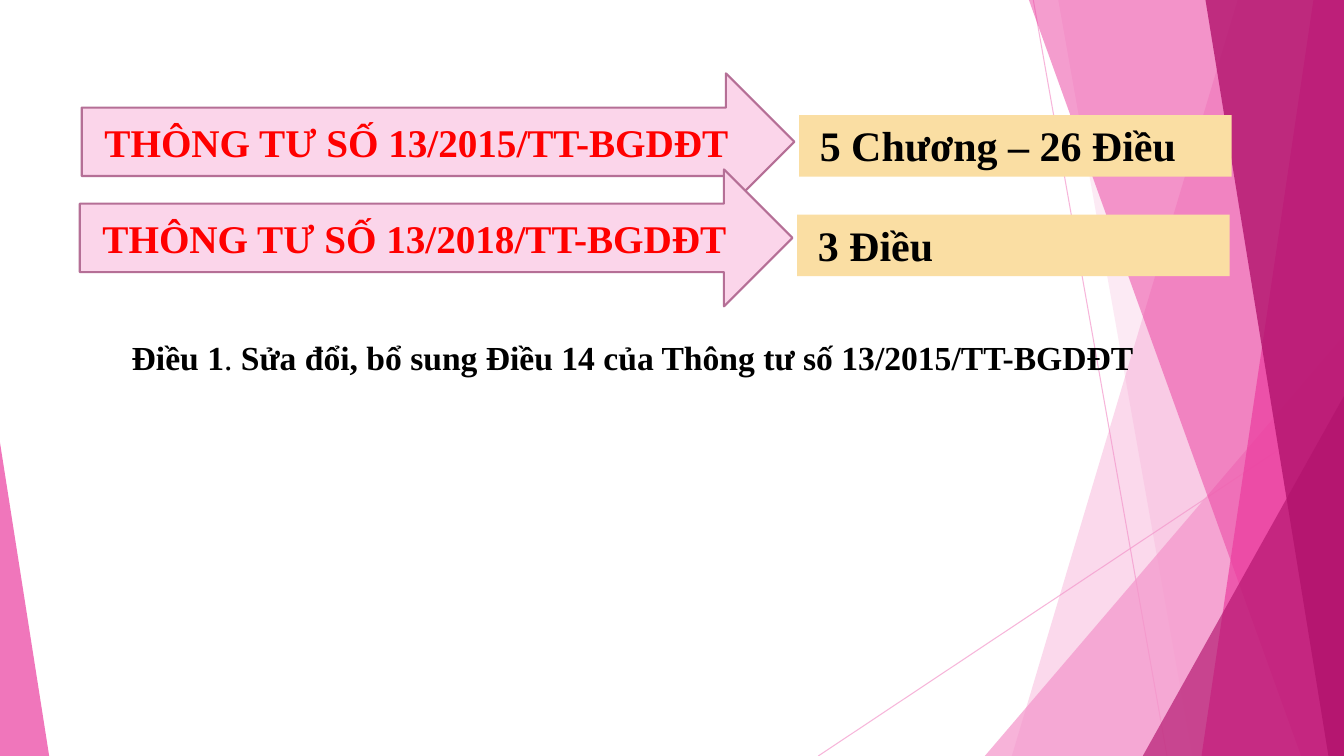
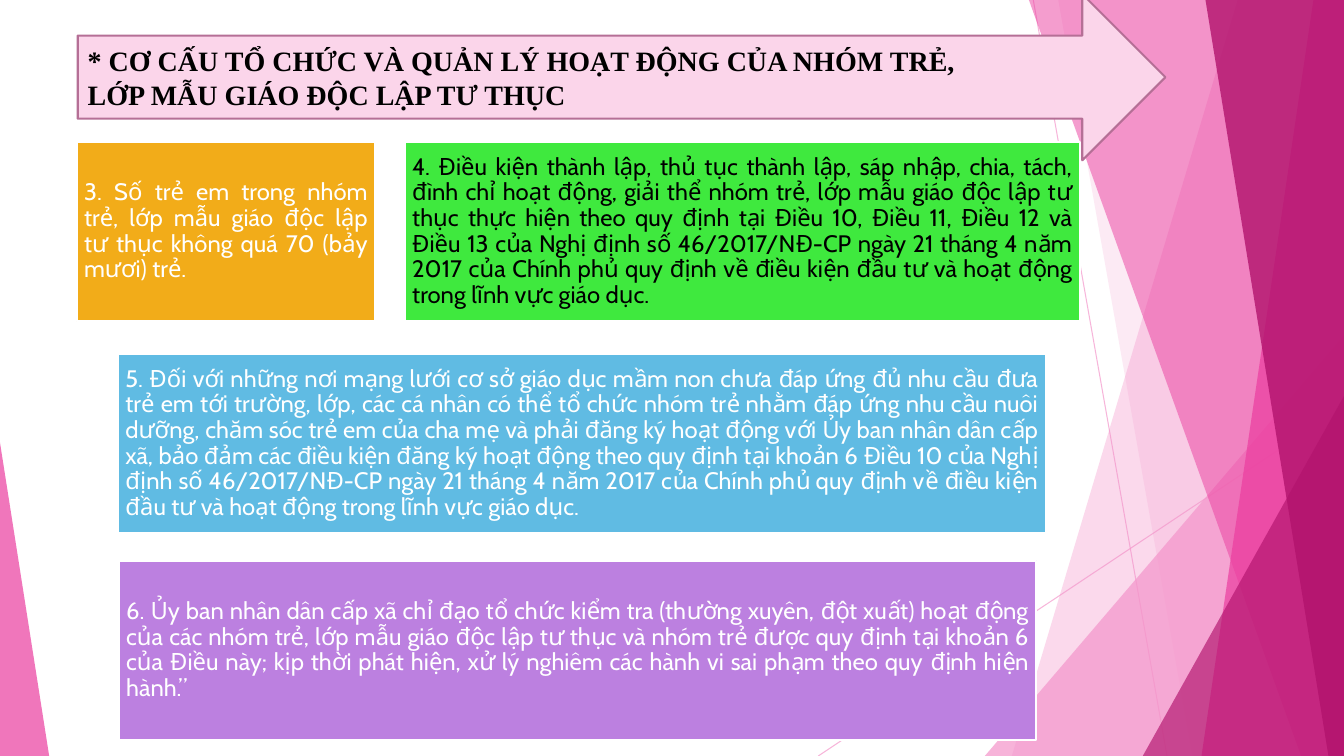
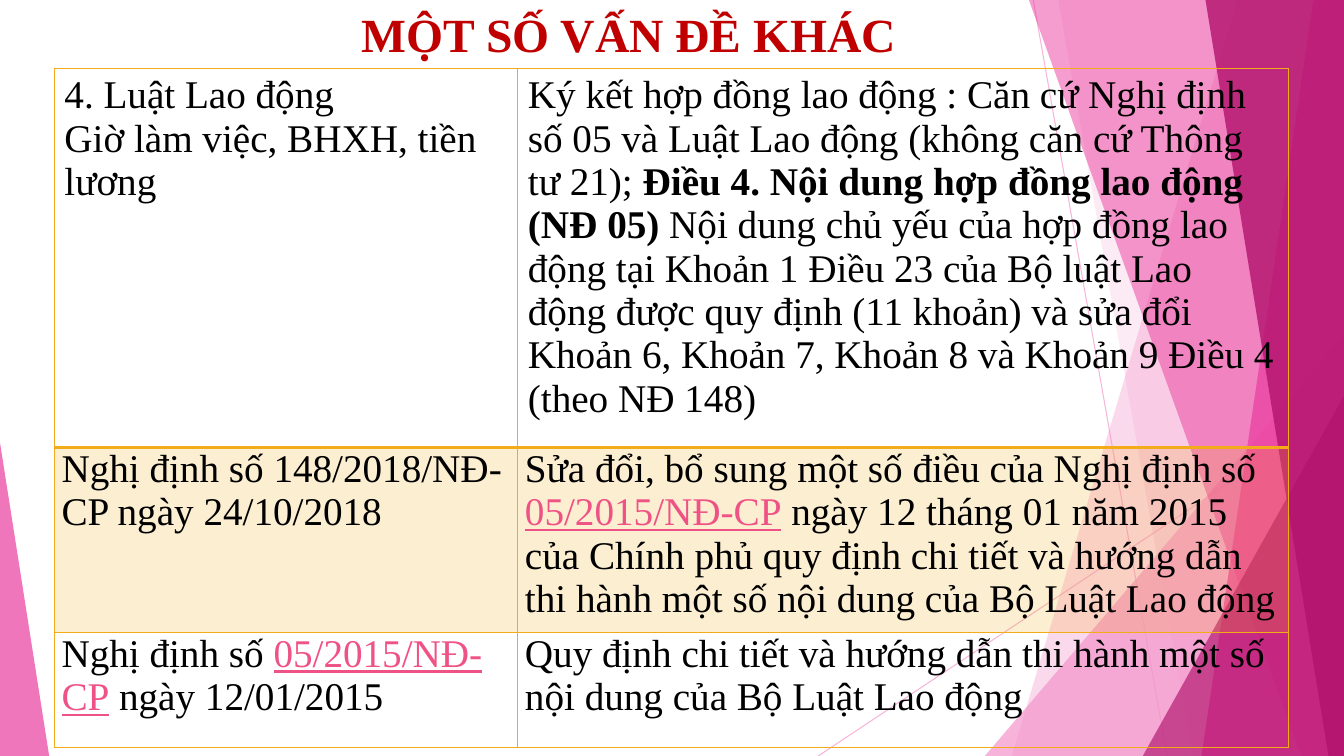
import functools

import lxml.etree
import pptx
import pptx.dml.color
import pptx.enum.shapes
import pptx.enum.text
import pptx.oxml.ns
import pptx.util

Cm = pptx.util.Cm
Pt = pptx.util.Pt
RGBColor = pptx.dml.color.RGBColor
SHAPE = pptx.enum.shapes.MSO_SHAPE
ALIGN = pptx.enum.text.PP_ALIGN
ANCHOR = pptx.enum.text.MSO_ANCHOR
qn = pptx.oxml.ns.qn

WHITE = RGBColor(0xFF, 0xFF, 0xFF)
BLACK = RGBColor(0x00, 0x00, 0x00)
RED = RGBColor(0xFF, 0x00, 0x00)
DARK_RED = RGBColor(0xC0, 0x00, 0x00)
PALE_PINK = RGBColor(0xFB, 0xD5, 0xEA)
MAUVE = RGBColor(0xB5, 0x6F, 0x96)
LIGHT_PINK = RGBColor(0xF4, 0x96, 0xCB)
PINK = RGBColor(0xEB, 0x3D, 0x9F)
MAGENTA = RGBColor(0xB2, 0x13, 0x6D)
SAND = RGBColor(0xFA, 0xDE, 0xA3)
AMBER = RGBColor(0xF2, 0xAC, 0x19)
GREEN = RGBColor(0x3F, 0xE9, 0x3E)
SKY = RGBColor(0x60, 0xBB, 0xE3)
VIOLET = RGBColor(0xBC, 0x80, 0xE0)
ROSE = RGBColor(0xEF, 0x52, 0x85)

WIDTH, HEIGHT = 33.87, 19.05
TITLE_ONLY, BLANK = 5, 6
SERIF = "Times New Roman"
CITATION = {"color.rgb": ROSE, "underline": True}


def apply(target, formats):
    for name, value in formats.items():
        *parents, last = name.split(".")
        setattr(functools.reduce(getattr, parents, target), last, value)


def font_format(size, color, bold=False, name=SERIF):
    return {"name": name, "size": Pt(size), "bold": bold, "color.rgb": color}


def write(frame, paragraphs, font, layout):
    for index, runs in enumerate(paragraphs):
        paragraph = frame.add_paragraph() if index else frame.paragraphs[0]
        apply(paragraph, {"alignment": ALIGN.LEFT, **layout})
        for text, changes in runs:
            run = paragraph.add_run()
            run.text = text
            apply(run.font, {**font, **changes})


def plain(*lines):
    return [[(line, {})] for line in lines]


def set_alpha(element, percent):
    for color in element.iter(qn("a:srgbClr")):
        alpha = lxml.etree.SubElement(color, qn("a:alpha"))
        alpha.set("val", str(percent * 1000))


def paint(shape, fill, line=None):
    shape.shadow.inherit = False
    shape.fill.solid()
    shape.fill.fore_color.rgb = fill
    if line is None:
        shape.line.fill.background()
    else:
        apply(shape.line, {"color.rgb": line, "width": Pt(1.5)})


def add_block(slide, kind, box, fill, line=None):
    block = slide.shapes.add_shape(kind, *map(Cm, box))
    paint(block, fill, line)
    return block


def add_ray(slide, ends):
    ray = slide.shapes.add_connector(
        pptx.enum.shapes.MSO_CONNECTOR.STRAIGHT, *map(Cm, ends))
    apply(ray.line, {"color.rgb": LIGHT_PINK, "width": Pt(0.75)})
    set_alpha(ray.element, 70)
    lxml.etree.SubElement(ray.element.spPr, qn("a:effectLst"))
    return ray


def add_beam(slide, edge, color, alpha):
    top_x, bottom_x = edge
    corners = [(WIDTH, 0), (WIDTH, HEIGHT), (bottom_x, HEIGHT)]
    builder = slide.shapes.build_freeform(Cm(top_x), 0)
    builder.add_line_segments([(Cm(x), Cm(y)) for x, y in corners], close=True)
    beam = builder.convert_to_shape()
    paint(beam, color)
    set_alpha(beam.element, alpha)
    return beam


def add_wedge(slide, wedge_box, color, alpha):
    left, top, width, peak = wedge_box
    wedge = add_block(slide, SHAPE.ISOSCELES_TRIANGLE,
                      (left, top, width, HEIGHT - top), color)
    wedge.adjustments[0] = peak
    set_alpha(wedge.element, alpha)
    return wedge


def build_backdrop(slide, master):
    facets = [
        (add_beam, (31.19, 25.5), LIGHT_PINK, 36),
        (add_beam, (26.67, 30.05), LIGHT_PINK, 20),
        (add_wedge, (24.82, 8.46, 9.05, 1), LIGHT_PINK, 72),
        (add_beam, (25.93, 32.79), PINK, 50),
        (add_beam, (33.1, 30.28), PINK, 70),
        (add_beam, (30.38, 33.48), MAGENTA, 80),
        (add_wedge, (28.8, 9.98, 5.07, 1), MAGENTA, 66),
        (add_wedge, (0, 11.15, 1.24, 0), PINK, 70),
    ]
    parts = [add_ray(slide, ends) for ends in
             [(26.04, 0, 29.41, HEIGHT), (WIDTH, 10.24, 20.62, HEIGHT)]]
    parts += [add(slide, place, color, alpha)
              for add, place, color, alpha in facets]
    for index, part in enumerate(parts):
        next(part.element.iter(qn("p:cNvPr"))).set("id", str(100 + index))
        master.shapes.element.insert(2 + index, part.element)


def add_banner(slide, box, lines, font, align):
    banner = add_block(slide, SHAPE.RIGHT_ARROW, box, PALE_PINK, MAUVE)
    write(banner.text_frame, plain(*lines), font, {"alignment": align})


def add_circular_row(slide, left, top, name, count_drop, count):
    add_banner(slide, (left, top, 17.96, 3.45), [name],
               font_format(28, RED, True), ALIGN.CENTER)
    count_box = add_block(slide, SHAPE.RECTANGLE,
                          (left + 18.08, top + count_drop, 10.9, 1.55), SAND)
    apply(count_box.text_frame, {"vertical_anchor": ANCHOR.TOP,
                                 "margin_left": Cm(0.52)})
    write(count_box.text_frame, plain(count), font_format(30, BLACK, True), {})


def build_circulars(slide):
    add_circular_row(slide, 2.06, 1.85, "THÔNG TƯ SỐ 13/2015/TT-BGDĐT ",
                     1.05, "5 Chương – 26 Điều")
    add_circular_row(slide, 2.01, 4.27, "THÔNG TƯ SỐ 13/2018/TT-BGDĐT ",
                     1.14, "3 Điều")
    article = slide.shapes.add_textbox(*map(Cm, (3.07, 8.36, 28.78, 2.44)))
    article.text_frame.word_wrap = True
    runs = [("Điều 1", {}), (". ", {"bold": False}),
            ("Sửa đổi, bổ sung Điều 14 của Thông tư số 13/2015/TT-BGDĐT", {})]
    write(article.text_frame, [runs], font_format(24, BLACK, True),
          {"space_before": Pt(2), "space_after": Pt(2)})


def add_clause(slide, box, fill, color, text):
    clause = add_block(slide, SHAPE.RECTANGLE, box, fill, WHITE)
    apply(clause.text_frame, {f"margin_{side}": Cm(0.18) for side in
                              ("left", "top", "right", "bottom")})
    write(clause.text_frame, plain(text),
          font_format(17, color, name="Cabin"),
          {"alignment": ALIGN.JUSTIFY, "line_spacing": 0.9})


def build_clauses(slide):
    add_banner(slide, (1.96, -0.15, 27.41, 4.19),
               ["* CƠ CẤU TỔ CHỨC VÀ QUẢN LÝ HOẠT ĐỘNG CỦA NHÓM TRẺ,",
                "LỚP MẪU GIÁO ĐỘC LẬP TƯ THỤC"],
               font_format(20, BLACK, True), ALIGN.LEFT)
    clauses = [
        (1.94, 3.58, 7.51, AMBER, WHITE,
         "3. Số trẻ em trong nhóm trẻ, lớp mẫu giáo độc lập tư thục không "
         "quá 70 (bảy mươi) trẻ."),
        (10.21, 3.58, 17, GREEN, BLACK,
         "4. Điều kiện thành lập, thủ tục thành lập, sáp nhập, chia, tách, "
         "đình chỉ hoạt động, giải thể nhóm trẻ, lớp mẫu giáo độc lập tư "
         "thục thực hiện theo quy định tại Điều 10, Điều 11, Điều 12 và "
         "Điều 13 của Nghị định số 46/2017/NĐ-CP ngày 21 tháng 4 năm 2017 "
         "của Chính phủ quy định về điều kiện đầu tư và hoạt động trong "
         "lĩnh vực giáo dục."),
        (2.98, 8.92, 23.38, SKY, WHITE,
         "5. Đối với những nơi mạng lưới cơ sở giáo dục mầm non chưa đáp "
         "ứng đủ nhu cầu đưa trẻ em tới trường, lớp, các cá nhân có thể tổ "
         "chức nhóm trẻ nhằm đáp ứng nhu cầu nuôi dưỡng, chăm sóc trẻ em "
         "của cha mẹ và phải đăng ký hoạt động với Ủy ban nhân dân cấp xã, "
         "bảo đảm các điều kiện đăng ký hoạt động theo quy định tại khoản 6 "
         "Điều 10 của Nghị định số 46/2017/NĐ-CP ngày 21 tháng 4 năm 2017 "
         "của Chính phủ quy định về điều kiện đầu tư và hoạt động trong "
         "lĩnh vực giáo dục."),
        (3, 14.13, 23.12, VIOLET, WHITE,
         "6. Ủy ban nhân dân cấp xã chỉ đạo tổ chức kiểm tra (thường xuyên, "
         "đột xuất) hoạt động của các nhóm trẻ, lớp mẫu giáo độc lập tư thục "
         "và nhóm trẻ được quy định tại khoản 6 của Điều này; kịp thời phát "
         "hiện, xử lý nghiêm các hành vi sai phạm theo quy định hiện hành.”"),
    ]
    for left, top, width, fill, color, text in clauses:
        add_clause(slide, (left, top, width, 4.52), fill, color, text)


def set_borders(cell, widths):
    properties = cell._tc.get_or_add_tcPr()
    for side, width in widths.items():
        border = lxml.etree.SubElement(properties, qn(f"a:ln{side}"))
        border.set("w", str(Pt(width)))
        fill = lxml.etree.SubElement(border, qn("a:solidFill"))
        lxml.etree.SubElement(fill, qn("a:srgbClr")).set("val", str(AMBER))


def add_law_table(slide, box, column_widths, row_heights, content):
    table = slide.shapes.add_table(len(row_heights), len(column_widths),
                                   *map(Cm, box)).table
    apply(table, {"first_row": False, "horz_banding": False})
    for column, width in zip(table.columns, column_widths):
        column.width = Cm(width)
    for index, (row, height) in enumerate(zip(table.rows, row_heights)):
        row.height = Cm(height)
        for cell, paragraphs in zip(row.cells, content[index]):
            set_borders(cell, {"L": 1, "R": 1, "T": 2 if index == 1 else 1,
                               "B": 1 if index else 2})
            layout = {}
            if index:
                apply(cell, {"margin_left": Cm(0.18), "margin_right": Cm(0.18),
                             "margin_top": 0, "margin_bottom": 0})
                layout = {"space_before": Pt(6), "space_after": Pt(6)}
            if index == 1:
                cell.fill.solid()
                cell.fill.fore_color.rgb = AMBER
                set_alpha(cell._tc.tcPr.find(qn("a:solidFill")), 20)
            else:
                cell.fill.background()
            write(cell.text_frame, paragraphs, font_format(28, BLACK), layout)


def build_other_issues(slide):
    title = slide.shapes.title
    apply(title, dict(zip(("left", "top", "width", "height"),
                          map(Cm, (0.81, 0, 33.05, 1.4)))))
    apply(title.text_frame, {
        "vertical_anchor": ANCHOR.TOP, "word_wrap": True,
        "auto_size": pptx.enum.text.MSO_AUTO_SIZE.NONE,
        "margin_left": Cm(8.31)})
    write(title.text_frame, plain("MỘT SỐ VẤN ĐỀ KHÁC"),
          font_format(34, DARK_RED, True), {})
    decree = ("05/2015/NĐ-CP", CITATION)
    content = [
        [plain("4. Luật Lao động", "Giờ làm việc, BHXH, tiền lương"),
         [[("Ký kết hợp đồng lao động : Căn cứ Nghị định số 05 và Luật Lao "
            "động (không căn cứ Thông tư 21); ", {}),
           ("Điều 4. Nội dung hợp đồng lao động (NĐ 05) ", {"bold": True}),
           ("Nội dung chủ yếu của hợp đồng lao động tại Khoản 1 Điều 23 của "
            "Bộ luật Lao động được quy định (11 khoản) và sửa đổi Khoản 6, "
            "Khoản 7, Khoản 8 và Khoản 9 Điều 4 (theo NĐ 148)", {})]]],
        [plain("Nghị định số 148/2018/NĐ-CP ngày 24/10/2018"),
         [[("Sửa đổi, bổ sung một số điều của Nghị định số ", {}), decree,
           (" ngày 12 tháng 01 năm 2015 của Chính phủ quy định chi tiết và "
            "hướng dẫn thi hành một số nội dung của Bộ Luật Lao động", {})]]],
        [[[("Nghị định số ", {}), decree, (" ngày 12/01/2015", {})]],
         plain("Quy định chi tiết và hướng dẫn thi hành một số nội dung của "
               "Bộ Luật Lao động")],
    ]
    add_law_table(slide, (1.37, 1.73, 31.11, 17.1), (11.68, 19.43),
                  (9.55, 4.65, 2.9), content)


def main():
    deck = pptx.Presentation()
    apply(deck, {"slide_width": Cm(WIDTH), "slide_height": Cm(HEIGHT)})
    pages = [(BLANK, build_circulars), (BLANK, build_clauses),
             (TITLE_ONLY, build_other_issues)]
    for index, (layout, build) in enumerate(pages):
        slide = deck.slides.add_slide(deck.slide_layouts[layout])
        if index == 0:
            build_backdrop(slide, deck.slide_master)
        build(slide)
    deck.save("out.pptx")


if __name__ == "__main__":
    main()
